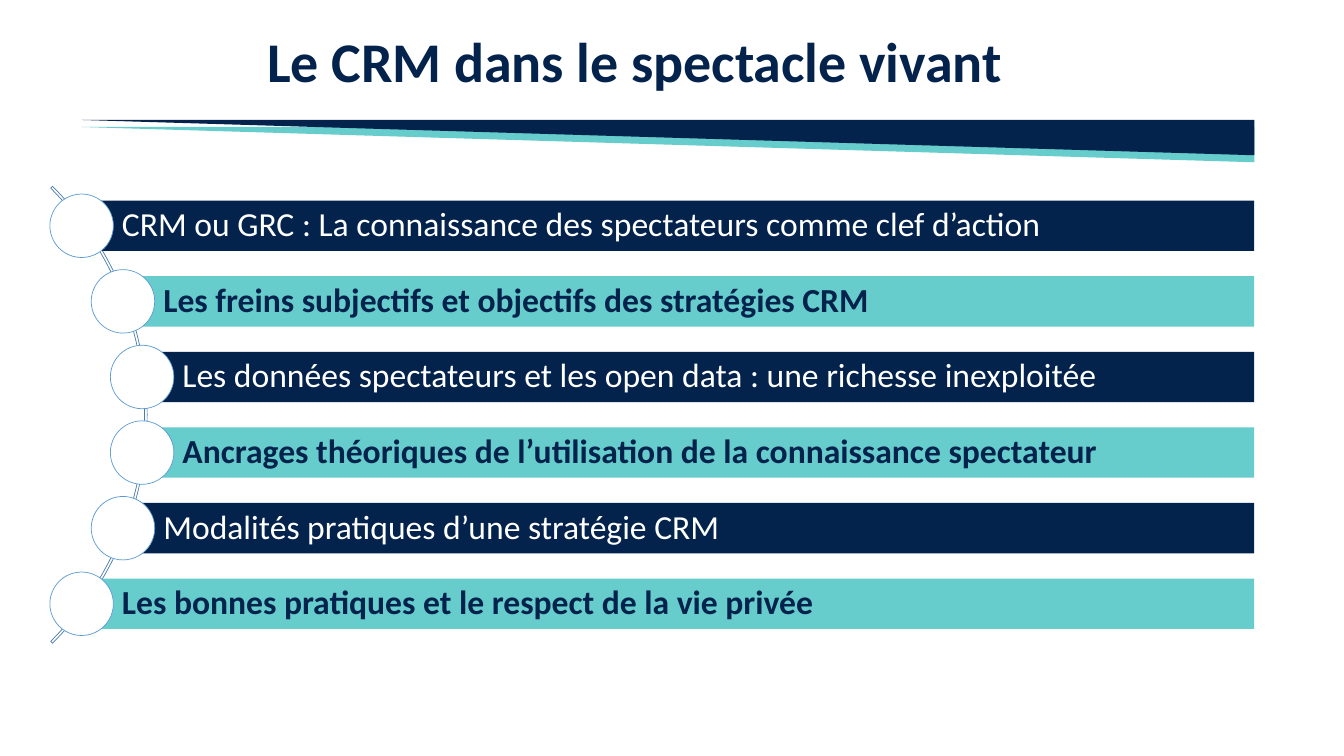
from pptx import Presentation
from pptx.dml.color import RGBColor
from pptx.enum.shapes import MSO_SHAPE
from pptx.enum.text import MSO_ANCHOR, PP_ALIGN
from pptx.util import Inches, Pt

NAVY = RGBColor(0x03, 0x22, 0x4C)
TEAL = RGBColor(0x66, 0xCC, 0xCC)
WHITE = RGBColor(0xFF, 0xFF, 0xFF)
ARC_BLUE = RGBColor(0x49, 0x7C, 0xAB)
RING_BLUE = RGBColor(0x5B, 0x9B, 0xD5)

RIGHT = 12.44          # right edge of the bars and the wedge
FIRST_CENTER = 2.24    # vertical centre of the first bar
PITCH = 0.75
BAR_HEIGHT = 0.5
DOT = 0.63

# Left edge of each bar, following the arc, and its wording
TOPICS = [
    (0.81, "CRM ou GRC : La connaissance des spectateurs comme clef d’action"),
    (1.22, "Les freins subjectifs et objectifs des stratégies CRM"),
    (1.41, "Les données spectateurs et les open data : une richesse inexploitée"),
    (1.41, "Ancrages théoriques de l’utilisation de la connaissance spectateur"),
    (1.22, "Modalités pratiques d’une stratégie CRM"),
    (0.81, "Les bonnes pratiques et le respect de la vie privée"),
]


class SlideBuilder:
    font = "Calibri"

    def __init__(self, slide):
        self.s = slide

    def shape(self, kind, x, y, w, h, fill=None, line=None):
        sp = self.s.shapes.add_shape(kind, Inches(x), Inches(y), Inches(w), Inches(h))
        sp.shadow.inherit = False
        if fill is None:
            sp.fill.background()
        else:
            sp.fill.solid()
            sp.fill.fore_color.rgb = fill
        if line is None:
            sp.line.fill.background()
        else:
            sp.line.color.rgb = line
            sp.line.width = Pt(0.5)
        return sp

    def label(self, sp, text, size, color, bold, align):
        tf = sp.text_frame
        tf.word_wrap = True
        tf.vertical_anchor = MSO_ANCHOR.MIDDLE
        p = tf.paragraphs[0]
        p.alignment = align
        p.line_spacing = 0.9
        r = p.add_run()
        r.text = text
        r.font.name = self.font
        r.font.size = Pt(size)
        r.font.bold = bold
        r.font.color.rgb = color

    def title(self, text, x, y, w, h):
        sp = self.s.shapes.add_textbox(Inches(x), Inches(y), Inches(w), Inches(h))
        self.label(sp, text, 40, NAVY, True, PP_ALIGN.CENTER)

    def wedge(self, y, color):
        sp = self.shape(MSO_SHAPE.RIGHT_TRIANGLE, 0.81, y, RIGHT - 0.81, 0.35, color)
        sp.rotation = 180

    def arc(self, x, y, size):
        sp = self.shape(MSO_SHAPE.BLOCK_ARC, x, y, size, size, line=ARC_BLUE)
        for i, value in enumerate((189, 27, 0.004)):
            sp.adjustments[i] = value

    def topic(self, x, center, text, fill, color, bold):
        sp = self.shape(MSO_SHAPE.RECTANGLE, x, center - BAR_HEIGHT / 2,
                        RIGHT - x, BAR_HEIGHT, fill)
        tf = sp.text_frame
        tf.margin_left = Inches(0.4)
        tf.margin_right = tf.margin_top = tf.margin_bottom = Inches(0.07)
        self.label(sp, text, 24, color, bold, PP_ALIGN.LEFT)
        self.shape(MSO_SHAPE.OVAL, x - DOT / 2, center - DOT / 2, DOT, DOT,
                   WHITE, RING_BLUE)


def main():
    prs = Presentation()
    prs.slide_width = Inches(13.33)
    prs.slide_height = Inches(7.5)
    s = SlideBuilder(prs.slides.add_slide(prs.slide_layouts[6]))

    # Header: two wedges and the title
    s.wedge(1.26, TEAL)
    s.wedge(1.19, NAVY)
    s.title("Le CRM dans le spectacle vivant", 0.18, -0.09, 12.23, 1.45)

    # Curved list: navy and teal bars in turn
    s.arc(-4.95, 0.91, 6.41)
    styles = [(NAVY, WHITE, False), (TEAL, NAVY, True)]
    for i, (x, text) in enumerate(TOPICS):
        s.topic(x, FIRST_CENTER + i * PITCH, text, *styles[i % 2])

    prs.save("out.pptx")


if __name__ == "__main__":
    main()
